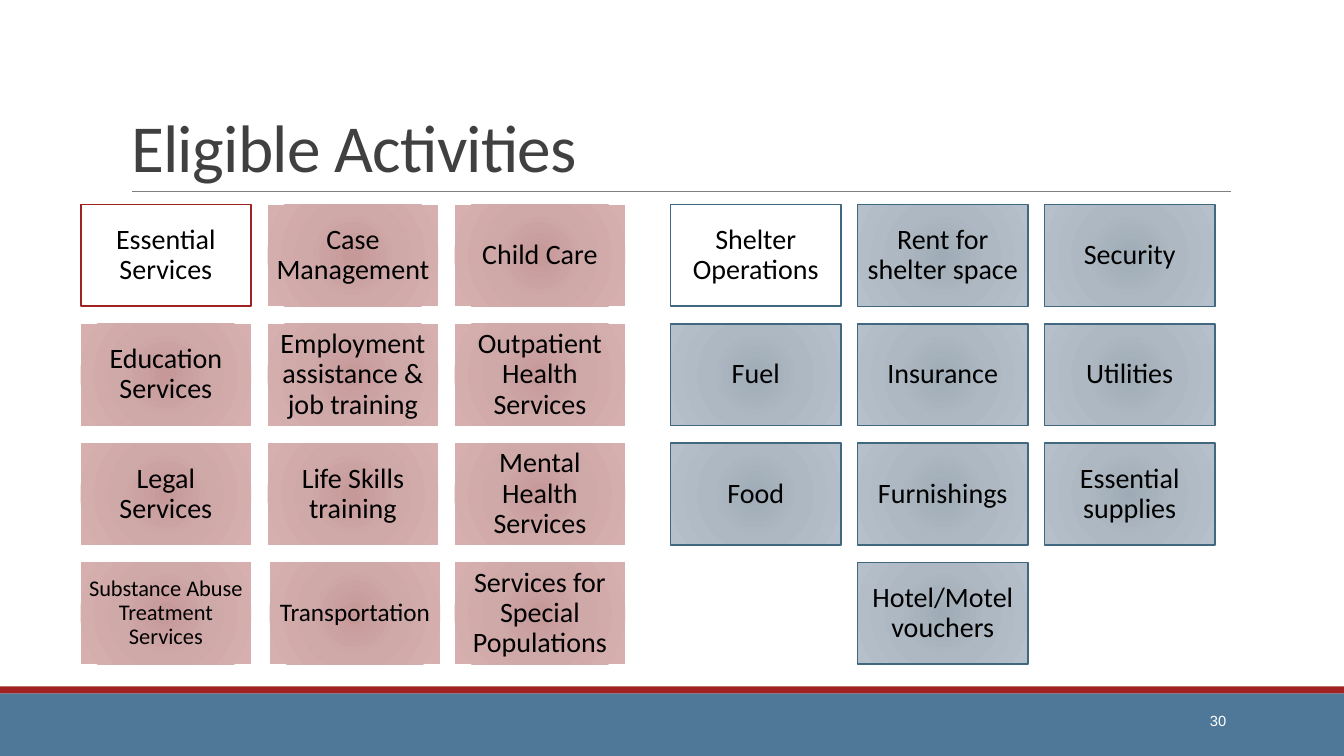
from lxml import etree
from pptx import Presentation
from pptx.dml.color import RGBColor
from pptx.enum.shapes import MSO_CONNECTOR, MSO_SHAPE
from pptx.enum.text import MSO_ANCHOR, PP_ALIGN
from pptx.oxml.ns import qn
from pptx.util import Inches, Pt

LEFT, CENTER, RIGHT = PP_ALIGN.LEFT, PP_ALIGN.CENTER, PP_ALIGN.RIGHT
MIDDLE, BOTTOM = MSO_ANCHOR.MIDDLE, MSO_ANCHOR.BOTTOM
RECTANGLE, STRAIGHT = MSO_SHAPE.RECTANGLE, MSO_CONNECTOR.STRAIGHT

WHITE = RGBColor(0xFF, 0xFF, 0xFF)
BLACK = RGBColor(0, 0, 0)
DARK_GRAY = RGBColor(0x40, 0x40, 0x40)
RULE_GRAY = RGBColor(0x80, 0x80, 0x80)
RED = RGBColor(0x9F, 0x21, 0x22)
BAND_BLUE = RGBColor(0x4F, 0x78, 0x98)
LINE_BLUE = RGBColor(0x42, 0x67, 0x81)
RED_TINTS = [RGBColor(0xC6, 0x98, 0x98), RGBColor(0xCF, 0xA8, 0xA8), RGBColor(0xD7, 0xAF, 0xAF)]
BLUE_TINTS = [RGBColor(0x9F, 0xAB, 0xB6), RGBColor(0xAE, 0xB8, 0xC2), RGBColor(0xB6, 0xC0, 0xCA)]

TITLE = "Eligible Activities"
SLIDE_NUMBER = "30"
# The first activity of each group is its heading; None leaves a cell empty.
GROUPS = [
    {"left": 0.8, "heading_line": RED, "line": None, "tints": RED_TINTS, "activities": [
        "Essential Services", "Case Management", "Child Care",
        "Education Services", "Employment assistance & job training", "Outpatient Health Services",
        "Legal Services", "Life Skills training", "Mental Health Services",
        "Substance Abuse Treatment Services", "Transportation", "Services for Special Populations"]},
    {"left": 6.65, "heading_line": LINE_BLUE, "line": LINE_BLUE, "tints": BLUE_TINTS, "activities": [
        "Shelter Operations", "Rent for shelter space", "Security",
        "Fuel", "Insurance", "Utilities",
        "Food", "Furnishings", "Essential supplies",
        None, "Hotel/Motel vouchers", None]},
]
SMALLER_SIZES = {"Substance Abuse Treatment Services": 16, "Transportation": 18}
NUDGES = {"Transportation": 0.02}

COLUMNS = 3
GRID_TOP = 2.03
BOX_WIDTH, BOX_HEIGHT = 1.69, 1.01
COLUMN_STEP, ROW_STEP = 1.855, 1.183
GRADIENT_STOPS = (0, 45, 100)


def write_text(shape, text, *, size, color, font="Calibri", align=CENTER, anchor=MIDDLE,
               line_spacing=None, inset=None, tracking=None):
    frame = shape.text_frame
    frame.word_wrap = True
    frame.vertical_anchor = anchor
    if inset is not None:
        frame.margin_left = frame.margin_right = Inches(inset)
        frame.margin_top = frame.margin_bottom = Inches(inset)
    paragraph = frame.paragraphs[0]
    paragraph.alignment = align
    if line_spacing:
        paragraph.line_spacing = line_spacing
    run = paragraph.add_run()
    run.text = text
    run.font.size = Pt(size)
    run.font.name = font
    run.font.color.rgb = color
    if tracking:
        run.font._element.set("spc", str(int(tracking * 100)))


def fill_radial(shape, tints):
    shape.fill.background()
    gradient = etree.Element(qn("a:gradFill"), rotWithShape="1")
    stops = etree.SubElement(gradient, qn("a:gsLst"))
    for position, tint in zip(GRADIENT_STOPS, tints):
        stop = etree.SubElement(stops, qn("a:gs"), pos=str(position * 1000))
        etree.SubElement(stop, qn("a:srgbClr"), val=str(tint))
    circle = etree.SubElement(gradient, qn("a:path"), path="circle")
    etree.SubElement(circle, qn("a:fillToRect"), l="100000", t="100000", r="100000", b="100000")
    properties = shape._element.spPr
    properties.replace(properties.find(qn("a:noFill")), gradient)


def add_rectangle(shapes, left, top, width, height, *, fill=None, tints=None, line=None, line_width=1):
    shape = shapes.add_shape(RECTANGLE, Inches(left), Inches(top), Inches(width), Inches(height))
    shape.shadow.inherit = False
    if tints:
        fill_radial(shape, tints)
    else:
        shape.fill.solid()
        shape.fill.fore_color.rgb = fill
    if line is None:
        shape.line.fill.background()
    else:
        shape.line.color.rgb = line
        shape.line.width = Pt(line_width)
    return shape


def add_frame(slide):
    """Add the rule under the title, the bottom bands and the slide number."""
    rule = slide.shapes.add_connector(STRAIGHT, Inches(1.31), Inches(1.9), Inches(12.21), Inches(1.9))
    rule.line.color.rgb = RULE_GRAY
    rule.line.width = Pt(0.5)
    etree.SubElement(rule._element.spPr, qn("a:effectLst"))
    for top in (6.93, 6.81):
        add_rectangle(slide.shapes, 0, top + 0.07, 13.33, 0.5, fill=BAND_BLUE)
        add_rectangle(slide.shapes, 0, top, 13.33, 0.07, fill=RED)
    number = slide.shapes.add_textbox(Inches(10.83), Inches(6.95), Inches(1.43), Inches(0.4))
    write_text(number, SLIDE_NUMBER, size=10.5, color=WHITE, font="Arial", align=RIGHT)


def add_activities(slide, left, heading_line, line, tints, activities):
    group = slide.shapes.add_group_shape()
    for index, activity in enumerate(activities):
        if activity is None:
            continue
        row, column = divmod(index, COLUMNS)
        x = left + column * COLUMN_STEP + NUDGES.get(activity, 0)
        y = GRID_TOP + row * ROW_STEP
        if index == 0:
            style = {"fill": WHITE, "line": heading_line, "line_width": 1.25}
        else:
            style = {"tints": tints, "line": line}
        box = add_rectangle(group.shapes, x, y, BOX_WIDTH, BOX_HEIGHT, **style)
        size = SMALLER_SIZES.get(activity, 20)
        write_text(box, activity, size=size, color=BLACK, line_spacing=0.9,
                   inset=0.08 if size == 20 else 0.07)


def main():
    presentation = Presentation()
    presentation.slide_width, presentation.slide_height = Inches(13.33), Inches(7.5)
    slide = presentation.slides.add_slide(presentation.slide_layouts[5])
    add_frame(slide)
    title = slide.shapes.title
    title.left, title.top, title.width, title.height = Inches(1.2), Inches(0.31), Inches(11), Inches(1.59)
    write_text(title, TITLE, size=48, color=DARK_GRAY, align=LEFT, anchor=BOTTOM,
               line_spacing=0.85, tracking=-0.5)
    for group in GROUPS:
        add_activities(slide, **group)
    presentation.save("out.pptx")


if __name__ == "__main__":
    main()
